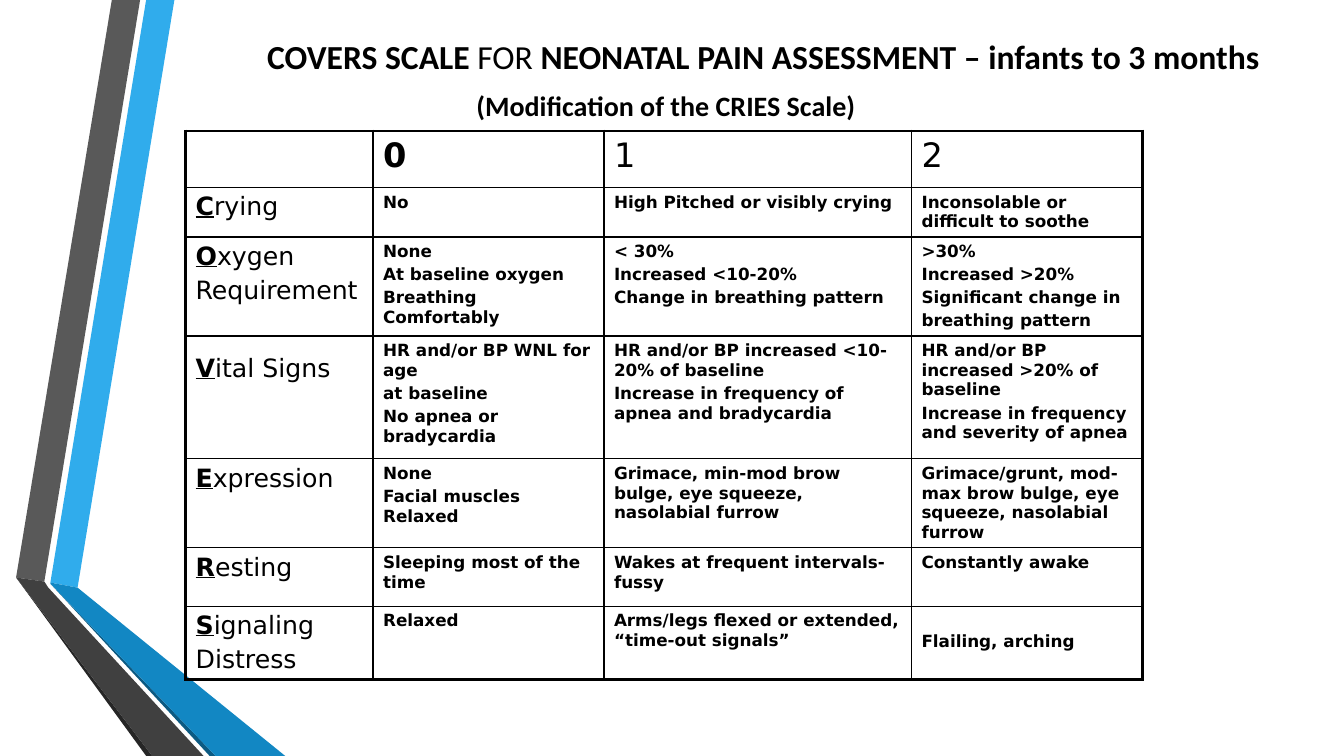
from lxml.etree import SubElement
from pptx import Presentation
from pptx.dml.color import RGBColor
from pptx.enum.text import MSO_ANCHOR, PP_ALIGN
from pptx.oxml.ns import qn
from pptx.util import Inches, Pt

BLACK = "000000"
TABLE_FONT = "DejaVu Sans"
TITLE_FONT = "Calibri"
COLUMN_WIDTHS = [1.86, 2.29, 3.05, 2.29]
ROW_HEIGHTS = [0.56, 0.49, 0.98, 1.22, 0.88, 0.58, 0.73]
TALL_LINES = ("Vital Signs", "Flailing, arching")

# Each row: category, then the findings that score 0, 1 and 2
SCORES = [
    ["", "0", "1", "2"],
    ["Crying", "No", "High Pitched or visibly crying", "Inconsolable or difficult to soothe"],
    ["Oxygen\nRequirement",
     "None\nAt baseline oxygen\nBreathing Comfortably",
     "< 30%\nIncreased <10-20%\nChange in breathing pattern",
     ">30%\nIncreased >20%\nSignificant change in\nbreathing pattern"],
    ["Vital Signs",
     "HR and/or BP WNL for age\nat baseline\nNo apnea or bradycardia",
     "HR and/or BP increased <10-20% of baseline\nIncrease in frequency of apnea and bradycardia",
     "HR and/or BP increased >20% of baseline\nIncrease in frequency and severity of apnea"],
    ["Expression", "None\nFacial muscles Relaxed",
     "Grimace, min-mod brow bulge, eye squeeze, nasolabial furrow",
     "Grimace/grunt, mod-max brow bulge, eye squeeze, nasolabial furrow"],
    ["Resting", "Sleeping most of the time",
     "Wakes at frequent intervals- fussy", "Constantly awake"],
    ["Signaling\nDistress", "Relaxed",
     "Arms/legs flexed or extended, “time-out signals”", "Flailing, arching"],
]

# Ribbon outlines, in inches from the slide's top left corner
RIBBONS = [
    ("30ACEC", [(0.5, 5.78), (0.77, 5.83), (1.73, 0), (1.45, 0)]),
    ("595959", [(1.39, 0), (1.11, 0), (0.16, 5.73), (0.44, 5.77)]),
    ("262626", [(0.16, 5.73), (1.45, 7.5), (1.51, 7.5)]),
    ("0C5A82", [(0.5, 5.79), (2.08, 7.5), (2.14, 7.5)]),
    ("1287C3", [(0.5, 5.79), (2.14, 7.5), (2.83, 7.5), (0.77, 5.83), (0.5, 5.78)]),
    ("404040", [(2.02, 7.5), (0.48, 5.83), (0.44, 5.77), (0.16, 5.73), (1.51, 7.5)]),
]


def color(value):
    return RGBColor.from_string(value)


def add_run(paragraph, text, **formats):
    run = paragraph.add_run()
    run.text = text
    run.font.color.rgb = color(BLACK)
    for name, value in formats.items():
        setattr(run.font, name, value)


def add_ribbons(slide, left, top):
    for fill, points in RIBBONS:
        outline = [(Inches(left + x), Inches(top + y)) for x, y in points]
        builder = slide.shapes.build_freeform(*outline[0], scale=1.0)
        builder.add_line_segments(outline[1:], close=True)
        shape = builder.convert_to_shape()
        shape.shadow.inherit = False
        shape.fill.solid()
        shape.fill.fore_color.rgb = color(fill)
        shape.line.fill.background()


def place(shape, left, top, width, height):
    box = {"left": left, "top": top, "width": width, "height": height}
    for name, value in box.items():
        setattr(shape, name, Inches(value))


def add_title(slide, left, top, width, height):
    title = slide.shapes.title
    place(title, left, top, width, height)
    title.text_frame.vertical_anchor = MSO_ANCHOR.MIDDLE
    paragraph = title.text_frame.paragraphs[0]
    paragraph.alignment = PP_ALIGN.CENTER
    for text, bold in [("COVERS SCALE ", True), ("FOR", False),
                       (" NEONATAL PAIN ASSESSMENT – infants to 3 months", True)]:
        add_run(paragraph, text, name=TITLE_FONT, size=Pt(24), bold=bold)


def add_subtitle(slide, left, top, width, height):
    box = slide.shapes.add_textbox(*map(Inches, (left, top, width, height)))
    box.text_frame.word_wrap = False
    box.text_frame.vertical_anchor = MSO_ANCHOR.MIDDLE
    paragraph = box.text_frame.paragraphs[0]
    paragraph.alignment = PP_ALIGN.CENTER
    add_run(paragraph, "(Modification of the CRIES Scale)",
            name=TITLE_FONT, size=Pt(20), bold=True)


def set_borders(cell, outer_sides):
    properties = cell._tc.get_or_add_tcPr()
    for side in "LRTB":
        width = Pt(2.25 if side in outer_sides else 1)
        line = SubElement(properties, qn(f"a:ln{side}"), w=str(width))
        fill = SubElement(line, qn("a:solidFill"))
        SubElement(fill, qn("a:srgbClr"), val=BLACK)


def fill_cell(cell, text, row, column):
    size = 24 if row == 0 else 18 if column == 0 else 12
    bold = column == 1 if row == 0 else column > 0
    formats = {"name": TABLE_FONT, "size": Pt(size), "bold": bold}
    for index, line in enumerate(text.split("\n") if text else []):
        paragraph = cell.text_frame.paragraphs[0]
        if index:
            paragraph = cell.text_frame.add_paragraph()
            paragraph.space_before = Pt(size * 0.2)
        # The first letter of each category spells the scale's name
        if column == 0 and index == 0:
            add_run(paragraph, line[0], **{**formats, "bold": True, "underline": True})
            add_run(paragraph, line[1:], **formats)
        else:
            add_run(paragraph, line, **formats)
        if line in TALL_LINES:
            add_run(paragraph, " ", **{**formats, "size": Pt(28)})


def add_score_table(slide, left, top):
    rows, columns = len(ROW_HEIGHTS), len(COLUMN_WIDTHS)
    frame = slide.shapes.add_table(rows, columns, Inches(left), Inches(top),
                                   Inches(sum(COLUMN_WIDTHS)), Inches(sum(ROW_HEIGHTS)))
    table = frame.table
    table.first_row = table.horz_banding = False
    for column, width in zip(table.columns, COLUMN_WIDTHS):
        column.width = Inches(width)
    for row, height in zip(table.rows, ROW_HEIGHTS):
        row.height = Inches(height)
    for r, texts in enumerate(SCORES):
        for c, text in enumerate(texts):
            cell = table.cell(r, c)
            edges = {"L": c == 0, "R": c == columns - 1, "T": r == 0, "B": r == rows - 1}
            set_borders(cell, [side for side, outer in edges.items() if outer])
            cell.fill.background()
            fill_cell(cell, text, r, c)


def main():
    presentation = Presentation()
    presentation.slide_width = Inches(13.33)
    presentation.slide_height = Inches(7.5)
    slide = presentation.slides.add_slide(presentation.slide_layouts[5])
    add_ribbons(slide, 0, 0)
    add_title(slide, 2.04, 0.2, 11.06, 0.72)
    add_score_table(slide, 1.84, 1.3)
    add_subtitle(slide, 4.53, 0.82, 4.15, 0.44)
    presentation.save("out.pptx")


if __name__ == "__main__":
    main()
